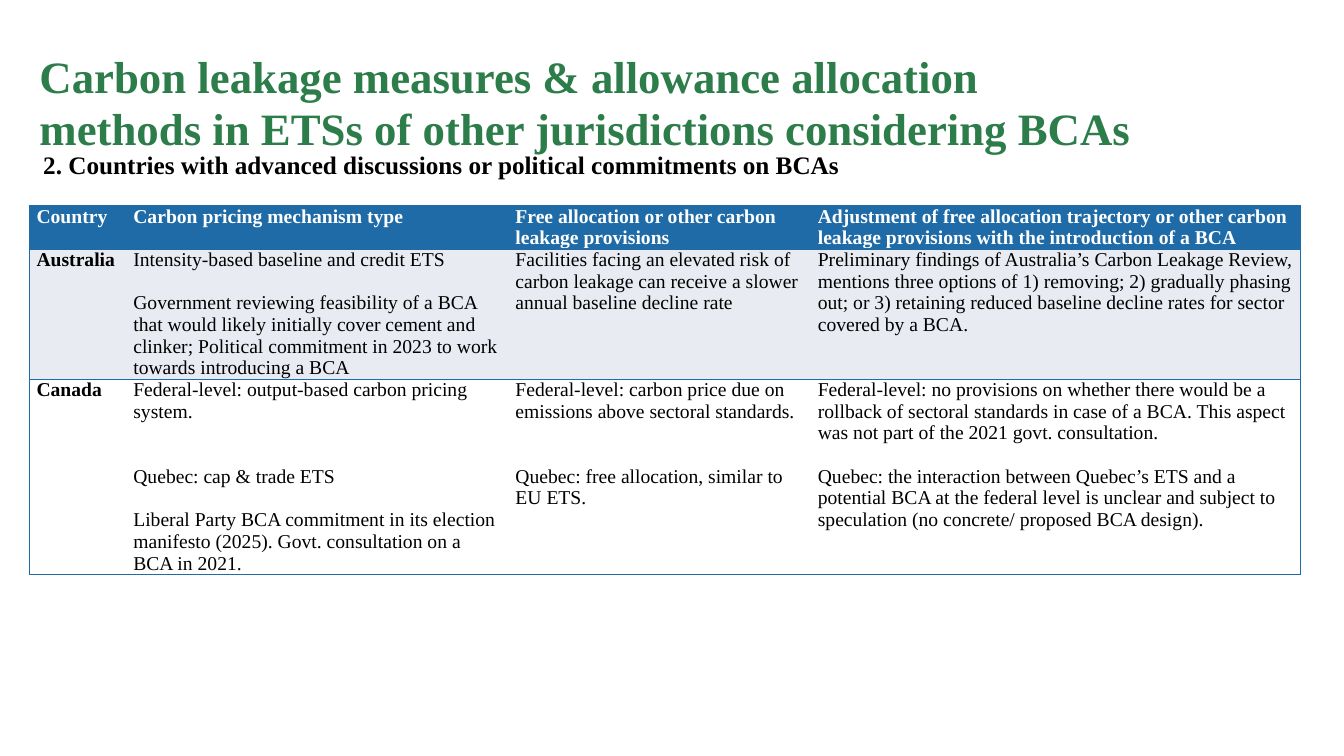
import pptx
import pptx.dml.color
import pptx.enum.text
import pptx.oxml.ns
import pptx.util
from lxml import etree

Cm = pptx.util.Cm
Pt = pptx.util.Pt
COLORS = {"green": "2C7D4A", "blue": "1F6BA7", "pale": "E8EBF1",
          "white": "FFFFFF", "black": "000000"}
LINE = 15.5  # height of one table text line in points


def style(para, size, color, bold=True):
    para.font.name = "Times New Roman"
    para.font.size = Pt(size)
    para.font.bold = bold
    para.font.color.rgb = pptx.dml.color.RGBColor.from_string(COLORS[color])


def add_border(cell, side, color):
    """Draw one cell edge, or clear it when color is None."""
    qn = pptx.oxml.ns.qn
    edge = etree.SubElement(cell._tc.get_or_add_tcPr(), qn("a:ln" + side), w=str(Pt(1)))
    if color is None:
        etree.SubElement(edge, qn("a:noFill"))
    else:
        fill = etree.SubElement(edge, qn("a:solidFill"))
        etree.SubElement(fill, qn("a:srgbClr"), val=COLORS[color])


deck = pptx.Presentation()
deck.slide_width, deck.slide_height = Cm(33.87), Cm(19.05)
page = deck.slides.add_slide(deck.slide_layouts[5])

# Title
title = page.shapes.title
title.left, title.top, title.width, title.height = Cm(0.74), Cm(1.17), Cm(28.19), Cm(1.47)
frame = title.text_frame
frame.text = ("Carbon leakage measures & allowance allocation methods in ETSs "
              "of other jurisdictions considering BCAs")
frame.word_wrap = True
frame.auto_size = pptx.enum.text.MSO_AUTO_SIZE.NONE
frame.vertical_anchor = pptx.enum.text.MSO_ANCHOR.TOP
para = frame.paragraphs[0]
para.alignment = pptx.enum.text.PP_ALIGN.LEFT
para.line_spacing = 0.97
style(para, 32, "green")

# Table content: each cell is a list of (blank lines before, text)
rows = [
    [[(0, "Country")],
     [(0, "Carbon pricing mechanism type")],
     [(0, "Free allocation or other carbon leakage provisions")],
     [(0, "Adjustment of free allocation trajectory or other carbon leakage "
          "provisions with the introduction of a BCA")]],
    [[(0, "Australia")],
     [(0, "Intensity-based baseline and credit ETS"),
      (1, "Government reviewing feasibility of a BCA that would likely initially "
          "cover cement and clinker; Political commitment in 2023 to work towards "
          "introducing a BCA")],
     [(0, "Facilities facing an elevated risk of carbon leakage can receive a "
          "slower annual baseline decline rate")],
     [(0, "Preliminary findings of Australia’s Carbon Leakage Review, mentions "
          "three options of 1) removing; 2) gradually phasing out; or 3) retaining "
          "reduced baseline decline rates for sector covered by a BCA.")]],
    [[(0, "Canada")],
     [(0, "Federal-level: output-based carbon pricing system."),
      (2, "Quebec: cap & trade ETS"),
      (1, "Liberal Party BCA commitment in its election manifesto (2025). Govt. "
          "consultation on a BCA in 2021.")],
     [(0, "Federal-level: carbon price due on emissions above sectoral standards."),
      (2, "Quebec: free allocation, similar to EU ETS.")],
     [(0, "Federal-level: no provisions on whether there would be a rollback of "
          "sectoral standards in case of a BCA. This aspect was not part of the "
          "2021 govt. consultation."),
      (1, "Quebec: the interaction between Quebec’s ETS and a potential BCA at the "
          "federal level is unclear and subject to speculation (no concrete/ "
          "proposed BCA design).")]],
]
widths = [2.44, 9.63, 7.62, 12.34]
heights = [1.09, 3.28, 4.92]
fills = ["blue", "pale", "white"]

# Table
table = page.shapes.add_table(len(rows), len(widths), Cm(0.74), Cm(5.18),
                              Cm(sum(widths)), Cm(sum(heights))).table
for column, width in zip(table.columns, widths):
    column.width = Cm(width)
for r, row in enumerate(rows):
    table.rows[r].height = Cm(heights[r])
    for c, content in enumerate(row):
        cell = table.cell(r, c)
        cell.margin_left = cell.margin_right = Cm(0.18)
        cell.margin_top = cell.margin_bottom = 0
        add_border(cell, "L", "blue" if c == 0 else None)
        add_border(cell, "R", "blue" if c == len(widths) - 1 else None)
        add_border(cell, "T", "blue")
        add_border(cell, "B", "blue")
        cell.fill.solid()
        cell.fill.fore_color.rgb = pptx.dml.color.RGBColor.from_string(COLORS[fills[r]])
        for i, (gap, text) in enumerate(content):
            para = cell.text_frame.add_paragraph() if i else cell.text_frame.paragraphs[0]
            para.text = text
            if gap:
                para.space_before = Pt(gap * LINE)
            style(para, 14, "white" if r == 0 else "black", r == 0 or c == 0)

# Subtitle
box = page.shapes.add_textbox(Cm(0.84), Cm(3.73), Cm(30.78), Cm(13.94))
box.text_frame.word_wrap = True
para = box.text_frame.paragraphs[0]
para.text = "2. Countries with advanced discussions or political commitments on BCAs"
para.line_spacing = 0.9
style(para, 18, "black")

deck.save("out.pptx")
